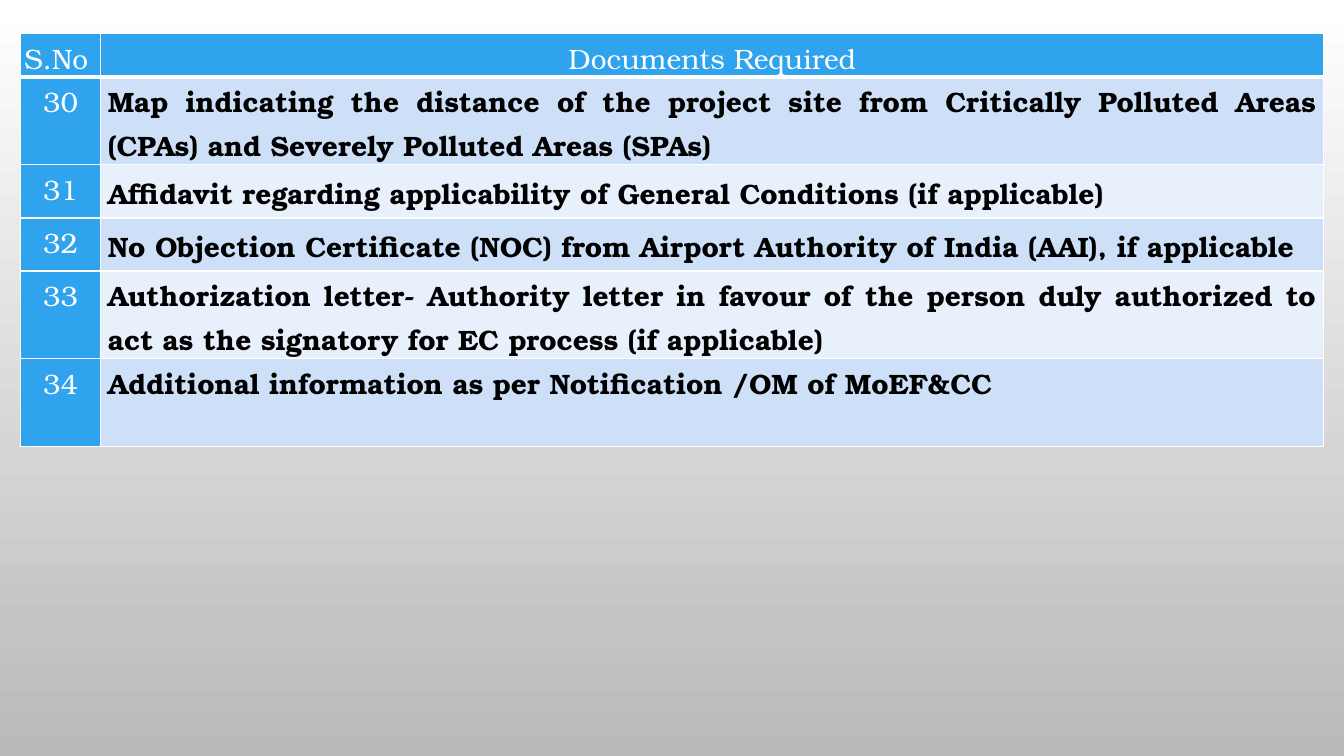
from dataclasses import dataclass

from lxml import etree
from pptx import Presentation
from pptx.dml.color import RGBColor
from pptx.enum import text
from pptx.oxml import ns
from pptx.util import Pt


@dataclass(frozen=True)
class Theme:
    font: str = "TeX Gyre Bonum"
    size: int = 20
    accent: str = "2FA3EE"
    bands: tuple = ("CDE0F8", "E8F0FC")
    light: str = "FFFFFF"
    dark: str = "000000"
    bg_end: str = "B9B9B9"
    rule: int = 1
    header_rule: int = 3


THEME = Theme()
ALIGN = text.PP_ALIGN
ANCHOR = text.MSO_ANCHOR
HEADER = ("S.No", "Documents Required")
HEADER_HEIGHT = 31
FIRST_NUMBER = 30
DOCUMENTS = [
    ("Map indicating the distance of the project site from Critically Polluted Areas "
     "(CPAs) and Severely Polluted Areas (SPAs)", 62.5, ANCHOR.MIDDLE),
    ("Affidavit regarding applicability of General Conditions (if applicable)",
     38, ANCHOR.MIDDLE),
    ("No Objection Certificate (NOC) from Airport Authority of India (AAI), if applicable",
     38, ANCHOR.MIDDLE),
    ("Authorization letter- Authority letter in favour of the person duly authorized to "
     "act as the signatory for EC process (if applicable)", 62.5, ANCHOR.MIDDLE),
    ("Additional information as per Notification /OM of MoEF&CC", 62.5, ANCHOR.TOP),
]


def add_borders(cell, bottom):
    tcPr = cell._tc.get_or_add_tcPr()
    widths = {"a:lnL": THEME.rule, "a:lnR": THEME.rule, "a:lnT": THEME.rule, "a:lnB": bottom}
    for tag, width in widths.items():
        ln = etree.SubElement(tcPr, ns.qn(tag), w=str(Pt(width)))
        fill = etree.SubElement(ln, ns.qn("a:solidFill"))
        etree.SubElement(fill, ns.qn("a:srgbClr"), val=THEME.light)


def fill_cell(cell, words, fill, color=THEME.light, bold=False, align=ALIGN.CENTER,
              anchor=ANCHOR.TOP, spacing=1.15, inset=3, bottom=THEME.rule):
    add_borders(cell, bottom)
    cell.fill.solid()
    cell.fill.fore_color.rgb = RGBColor.from_string(fill)
    cell.margin_left = cell.margin_right = Pt(inset)
    cell.margin_top = cell.margin_bottom = 0
    cell.vertical_anchor = anchor
    p = cell.text_frame.paragraphs[0]
    p.alignment = align
    p.line_spacing = spacing
    r = p.add_run()
    r.text = words
    r.font.name = THEME.font
    r.font.size = Pt(THEME.size)
    r.font.bold = bold
    r.font.color.rgb = RGBColor.from_string(color)


def add_documents_table(s, left, top, width, number_width):
    heights = [HEADER_HEIGHT] + [height for _, height, _ in DOCUMENTS]
    table = s.shapes.add_table(len(heights), len(HEADER), Pt(left), Pt(top),
                               Pt(width), Pt(sum(heights))).table
    table.horz_banding = False
    table.columns[0].width = Pt(number_width)
    table.columns[1].width = Pt(width - number_width)
    for row, height in zip(table.rows, heights):
        row.height = Pt(height)
    fill_cell(table.cell(0, 0), HEADER[0], THEME.accent, align=ALIGN.LEFT,
              bottom=THEME.header_rule)
    fill_cell(table.cell(0, 1), HEADER[1], THEME.accent, anchor=ANCHOR.MIDDLE,
              bottom=THEME.header_rule)
    for i, (words, _, anchor) in enumerate(DOCUMENTS):
        fill_cell(table.cell(i + 1, 0), str(FIRST_NUMBER + i), THEME.accent)
        fill_cell(table.cell(i + 1, 1), words, THEME.bands[i % 2], THEME.dark, True,
                  ALIGN.JUSTIFY, anchor, 1.07, 5)


def set_background(s):
    fill = s.background.fill
    fill.gradient()
    fill.gradient_angle = 270
    for stop, position, color in zip(fill.gradient_stops, (0, 1), (THEME.light, THEME.bg_end)):
        stop.position = position
        stop.color.rgb = RGBColor.from_string(color)


def main():
    prs = Presentation()
    prs.slide_width, prs.slide_height = Pt(960), Pt(540)
    s = prs.slides.add_slide(prs.slide_layouts[6])
    set_background(s)
    add_documents_table(s, 14.5, 24, 931, 57.5)
    prs.save("out.pptx")


if __name__ == "__main__":
    main()
